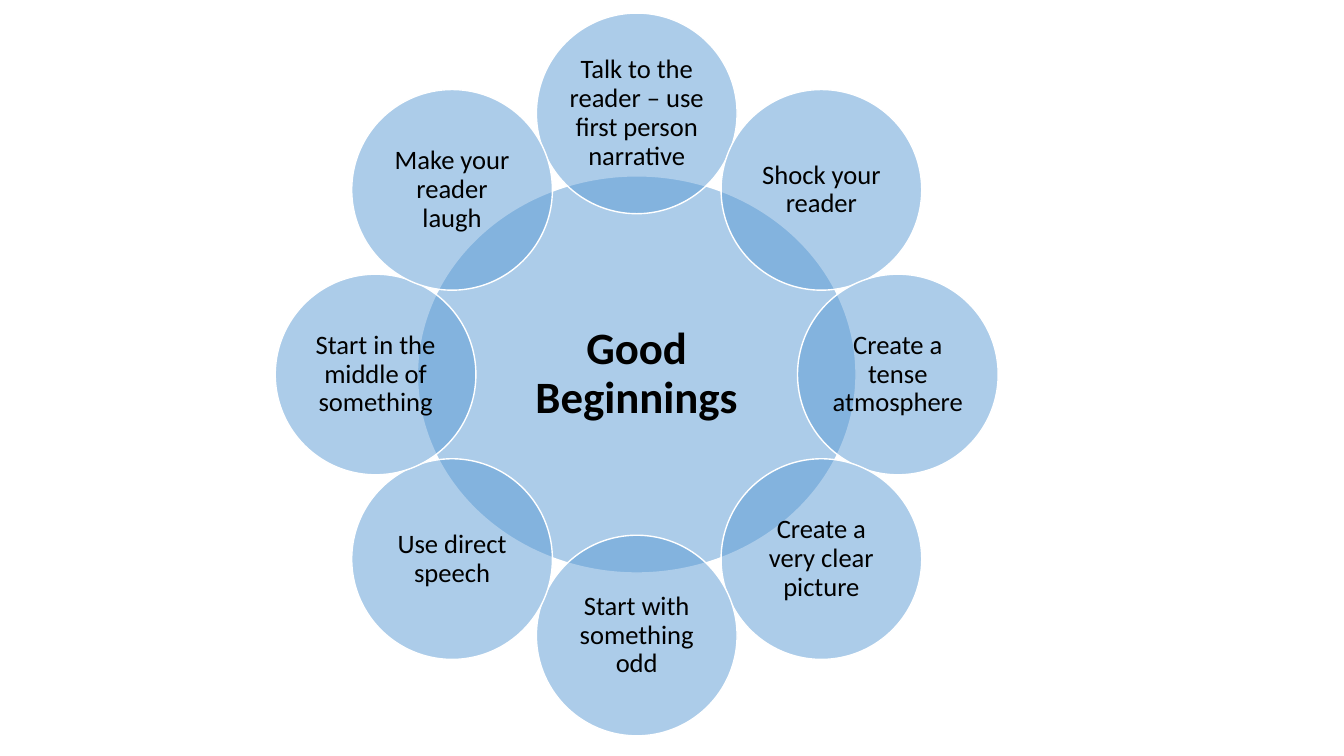
import math

from lxml import etree
from pptx import Presentation
from pptx.dml.color import RGBColor
from pptx.enum import shapes, text
from pptx.oxml import ns
from pptx.util import Inches, Pt

COLORS = {"petal": "5B9BD5", "outline": "FFFFFF", "text": "000000"}
FONT = "Calibri"
TOPIC = "Good Beginnings"
# Clockwise from the top
TECHNIQUES = [
    "Talk to the reader – use first person narrative",
    "Shock your reader",
    "Create a tense atmosphere",
    "Create a very clear picture",
    "Start with something odd",
    "Use direct speech",
    "Start in the middle of something",
    "Make your reader laugh",
]


def add_bubble(parent, label, center, size, inset, points, bold=False):
    """Add a half-transparent labelled ellipse around a center, in inches."""
    (x, y), (width, height) = center, size
    bubble = parent.shapes.add_shape(
        shapes.MSO_SHAPE.OVAL,
        Inches(x - width / 2), Inches(y - height / 2),
        Inches(width), Inches(height),
    )
    bubble.shadow.inherit = False
    bubble.fill.solid()
    bubble.fill.fore_color.rgb = RGBColor.from_string(COLORS["petal"])
    fill_color = bubble.fill._xPr.find(ns.qn("a:solidFill"))[0]
    etree.SubElement(fill_color, ns.qn("a:alpha"), val="50000")
    bubble.line.color.rgb = RGBColor.from_string(COLORS["outline"])
    bubble.line.width = Pt(1)

    frame = bubble.text_frame
    frame.word_wrap = True
    frame.vertical_anchor = text.MSO_ANCHOR.MIDDLE
    frame.margin_left = frame.margin_right = Inches(inset)
    frame.margin_top = frame.margin_bottom = Inches(inset)
    paragraph = frame.paragraphs[0]
    paragraph.alignment = text.PP_ALIGN.CENTER
    paragraph.line_spacing = 0.9
    run = paragraph.add_run()
    run.text = label
    run.font.name = FONT
    run.font.size = Pt(points)
    run.font.bold = bold
    run.font.color.rgb = RGBColor.from_string(COLORS["text"])


def add_flower(slide, left, top, side):
    """Place the topic inside a ring of techniques that fills a square."""
    flower = slide.shapes.add_group_shape()
    x, y = left + side / 2, top + side / 2
    petal = 1.99
    radius = (side - petal) / 2
    add_bubble(flower, TOPIC, (x, y), (4.35, 3.94), 0.04, 32, bold=True)
    for index, technique in enumerate(TECHNIQUES):
        angle = math.tau * index / len(TECHNIQUES)
        center = (x + radius * math.sin(angle), y - radius * math.cos(angle))
        add_bubble(flower, technique, center, (petal, petal), 0.03, 19)


def main():
    presentation = Presentation()
    presentation.slide_width = Inches(13.33)
    presentation.slide_height = Inches(7.5)
    slide = presentation.slides.add_slide(presentation.slide_layouts[6])
    add_flower(slide, left=2.73, top=0.13, side=7.17)
    presentation.save("out.pptx")


if __name__ == "__main__":
    main()
